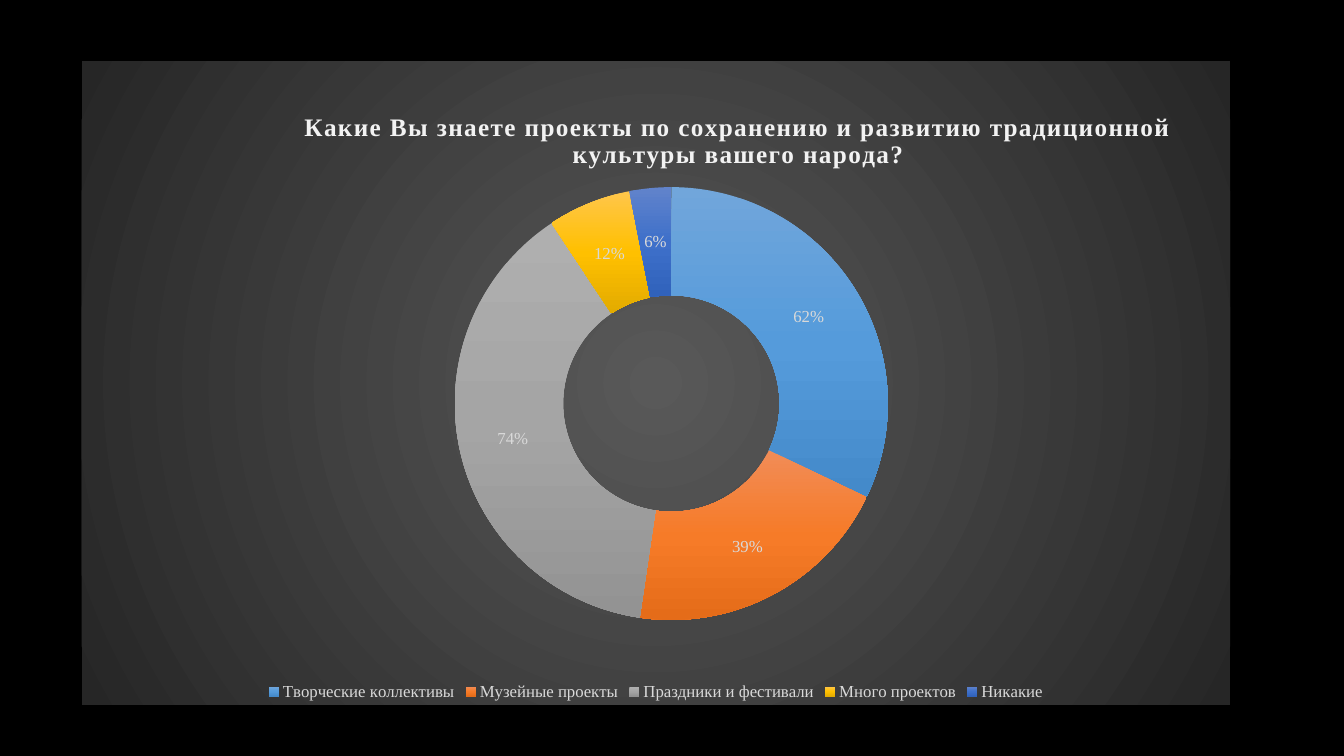
from lxml import etree
from pptx import Presentation
from pptx.chart.data import CategoryChartData as Data
from pptx.dml.color import RGBColor as Rgb
from pptx.enum.chart import XL_CHART_TYPE as Kind, XL_LEGEND_POSITION as Place
from pptx.oxml import parse_xml
from pptx.oxml.ns import nsdecls, qn
from pptx.util import Inches, Pt

TITLE = ("Какие Вы знаете проекты по сохранению и развитию "
         "традиционной культуры вашего народа?")
# Answer, share, gradient from top to bottom
ANSWERS = [
    ("Творческие коллективы", 0.62, ("71A6DB", "559BDB", "448ACA")),
    ("Музейные проекты", 0.39, ("F18C57", "F67B28", "E56C19")),
    ("Праздники и фестивали", 0.74, ("AFAFAF", "A5A5A5", "939393")),
    ("Много проектов", 0.12, ("FFC64B", "FFC000", "E3AB00")),
    ("Никакие", 0.06, ("6183CB", "3E70CA", "3062BB")),
]


def paint(code):
    return Rgb.from_string(code)


def style(font, size, color, face, bold=False):
    font.name, font.size, font.bold = face, Pt(size), bold
    font.color.rgb = paint(color)


def write(frame, text, space=0, **form):
    """Put formatted text in a frame, with letter spacing in points."""
    run = frame.paragraphs[0].add_run()
    run.text = text
    style(run.font, **form)
    run.font._element.set("spc", str(int(space * 100)))


def blend(colors, shade):
    """Gradient fill with evenly spaced stops."""
    step = 100000 // (len(colors) - 1)
    stops = "".join(f'<a:gs pos="{i * step}"><a:srgbClr val="{c}"/></a:gs>'
                    for i, c in enumerate(colors))
    return parse_xml(f'<a:gradFill {nsdecls("a")} rotWithShape="1">'
                     f'<a:gsLst>{stops}</a:gsLst>{shade}</a:gradFill>')


def layout(inner=False, **box):
    """Manual layout in fractions of the chart."""
    modes = {"xMode": "edge", "yMode": "edge"}
    if inner:
        modes = {"layoutTarget": "inner", **modes}
    parts = "".join(f'<c:{k} val="{v}"/>' for k, v in {**modes, **box}.items())
    return parse_xml(f'<c:layout {nsdecls("c")}><c:manualLayout>{parts}'
                     '</c:manualLayout></c:layout>')


def clear(node, tag):
    for old in node.findall(qn(tag)):
        node.remove(old)


class Deck:
    face = "Times New Roman"
    light, pale, back = "FFFFFF", "D9D9D9", "000000"
    linear = '<a:lin ang="5400000" scaled="0"/>'
    radial = ('<a:path path="circle"><a:fillToRect l="50000" t="50000" '
              'r="50000" b="50000"/></a:path>')

    def __init__(self):
        self.file = Presentation()
        self.file.slide_width, self.file.slide_height = Inches(13.33), Inches(7.5)
        self.slide = self.file.slides.add_slide(self.file.slide_layouts[6])
        fill = self.slide.background.fill
        fill.solid()
        fill.fore_color.rgb = paint(self.back)

    def ring(self, rows, left, top, width, height):
        data = Data(number_format="0%")
        data.categories = [row[0] for row in rows]
        data.add_series("Series 1", [row[1] for row in rows])
        chart = self.slide.shapes.add_chart(
            Kind.DOUGHNUT, Inches(left), Inches(top), Inches(width),
            Inches(height), data).chart
        style(chart.font, 10, self.light, self.face)
        plot = chart.plots[0]
        plot.vary_by_categories = True
        plot._element.find(qn("c:holeSize")).set("val", "75")
        self.slices(plot.series[0], [row[2] for row in rows])
        self.labels(plot)
        area = chart._chartSpace.chart.plotArea
        clear(area, "c:layout")
        area.insert(0, layout(True, x=0.325, y=0.194, w=0.377, h=0.676))
        return chart

    def slices(self, series, fills):
        for i, colors in enumerate(fills):
            form = series.points[i].format
            form.fill.solid()
            form.line.fill.background()
            shape = series._element.findall(qn("c:dPt"))[i].find(qn("c:spPr"))
            shape.replace(shape.find(qn("a:solidFill")),
                          blend(colors, self.linear))

    def labels(self, plot):
        plot.has_data_labels = True
        marks = plot.data_labels
        marks.show_value, marks.show_percentage = True, False
        marks.number_format, marks.number_format_is_linked = "0%", False
        style(marks.font, 12, self.pale, self.face)

    def title(self, chart, text, x, y):
        head = chart.chart_title
        write(head.text_frame, text, space=1, size=18, color="F2F2F2",
              face=self.face, bold=True)
        node = head._element
        clear(node, "c:layout")
        node.find(qn("c:tx")).addnext(layout(x=x, y=y))
        head.include_in_layout = False

    def legend(self, chart):
        chart.has_legend = True
        chart.legend.position = Place.BOTTOM
        chart.legend.include_in_layout = False
        style(chart.legend.font, 12, self.pale, self.face)

    def panel(self, chart, colors):
        space = chart._chartSpace
        shape = parse_xml(f'<c:spPr {nsdecls("c", "a")}/>')
        shape.append(blend(colors, self.radial))
        etree.SubElement(etree.SubElement(shape, qn("a:ln")), qn("a:noFill"))
        space.find(qn("c:chart")).addnext(shape)


def main():
    deck = Deck()
    # Ring of answers
    chart = deck.ring(ANSWERS, 0.81, 0.61, 11.39, 6.38)
    # Heading, legend and dark panel
    deck.title(chart, TITLE, x=0.19, y=0.07)
    deck.legend(chart)
    deck.panel(chart, ("595959", "262626"))
    deck.file.save("out.pptx")


if __name__ == "__main__":
    main()
